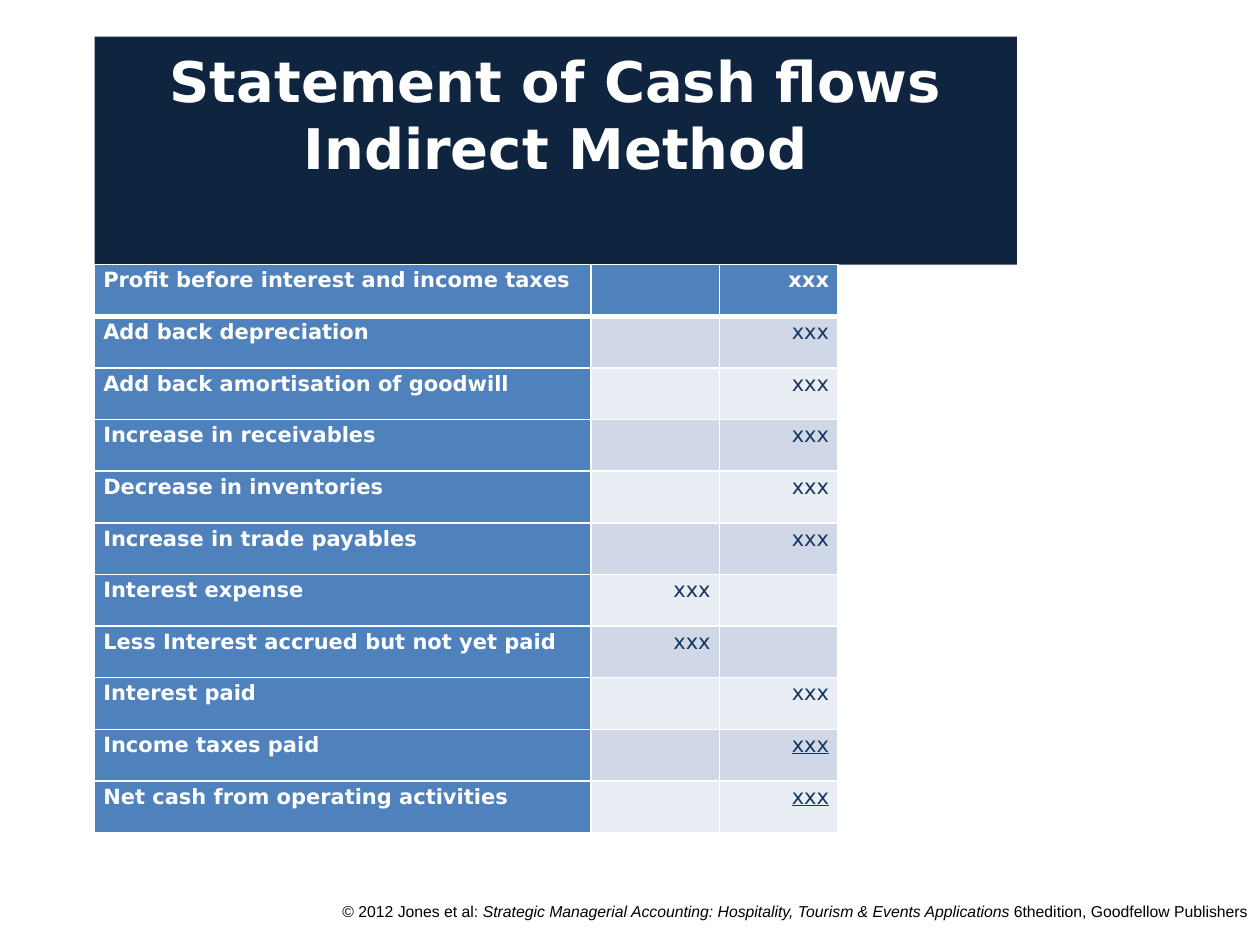
from lxml.etree import fromstring
from pptx import Presentation
from pptx.dml.color import RGBColor
from pptx.enum.text import MSO_ANCHOR, MSO_AUTO_SIZE, PP_ALIGN
from pptx.util import Inches, Pt

HUES = {"navy": "0F243E", "blue": "4F81BD", "odd": "D0D8E8", "even": "E9EDF4",
        "ink": "17375E", "white": "FFFFFF", "black": "000000"}
TITLE = "Statement of Cash flows\vIndirect Method"
ROWS = [
    ("Profit before interest and income taxes", "", "xxx"),
    ("Add back depreciation", "", "xxx"),
    ("Add back amortisation of goodwill", "", "xxx"),
    ("Increase in receivables", "", "xxx"),
    ("Decrease in inventories", "", "xxx"),
    ("Increase in trade payables", "", "xxx"),
    ("Interest expense", "xxx", ""),
    ("Less Interest accrued but not yet paid", "xxx", ""),
    ("Interest paid", "", "xxx"),
    ("Income taxes paid", "", "xxx"),
    ("Net cash from operating activities", "", "xxx"),
]
WIDTHS = (3.94, 1.02, 0.94)
HEIGHT = 0.41
TOTALS = 2
CREDIT = [
    ("© 2012 Jones et al: ", False),
    ("Strategic Managerial Accounting: Hospitality, Tourism & Events Applications ", True),
    ("6thedition, Goodfellow Publishers", False),
]
HEAD = {"name": "DejaVu Sans", "size": Pt(32), "bold": True}
BODY = {"name": "DejaVu Sans", "size": Pt(12)}
NOTE = {"name": "Arial", "size": Pt(9)}
PADS = {"margin_left": Inches(0.07), "margin_right": Inches(0.07),
        "margin_top": 0, "margin_bottom": 0}
SPACE = "http://schemas.openxmlformats.org/drawingml/2006/main"


def rgb(hue):
    """Return the named colour."""
    return RGBColor.from_string(HUES[hue])


def apply(item, form):
    """Set each attribute in the format."""
    for key, value in form.items():
        setattr(item, key, value)


def style(run, form, hue):
    """Format a run of text."""
    apply(run.font, form)
    run.font.color.rgb = rgb(hue)


def paint(item, hue):
    """Give a solid fill."""
    item.fill.solid()
    item.fill.fore_color.rgb = rgb(hue)


def edge(cell, top, bottom):
    """Draw white borders of the given point widths."""
    sides = {"L": 1, "R": 1, "T": top, "B": bottom}
    props = cell._tc.get_or_add_tcPr()
    for place, (side, width) in enumerate(sides.items()):
        props.insert(place, fromstring(
            f'<a:ln{side} xmlns:a="{SPACE}" w="{Pt(width)}"><a:solidFill>'
            f'<a:srgbClr val="{HUES["white"]}"/></a:solidFill></a:ln{side}>'))


def add_title(slide):
    """Fill the title band."""
    title = slide.shapes.title
    apply(title, {"left": Inches(0.75), "top": Inches(0.29),
                  "width": Inches(7.32), "height": Inches(1.81)})
    paint(title, "navy")
    frame = title.text_frame
    frame.text = TITLE
    apply(frame, {"vertical_anchor": MSO_ANCHOR.TOP, "word_wrap": True,
                  "auto_size": MSO_AUTO_SIZE.NONE, "margin_top": Inches(0.08)})
    para = frame.paragraphs[0]
    para.alignment = PP_ALIGN.CENTER
    for run in para.runs:
        style(run, HEAD, "white")


def add_grid(slide):
    """Build the cash flow table."""
    count = len(ROWS)
    grid = slide.shapes.add_table(
        count, len(WIDTHS), Inches(0.75), Inches(2.1),
        Inches(sum(WIDTHS)), Inches(HEIGHT * count)).table
    for col, width in zip(grid.columns, WIDTHS):
        col.width = Inches(width)
    for r, row in enumerate(ROWS):
        grid.rows[r].height = Inches(HEIGHT)
        for c, text in enumerate(row):
            cell = grid.cell(r, c)
            strong = r == 0 or c == 0
            band = "odd" if r % 2 else "even"
            apply(cell, PADS)
            paint(cell, "blue" if strong else band)
            edge(cell, 3 if r == 1 else 1, 3 if r == 0 else 1)
            para = cell.text_frame.paragraphs[0]
            apply(para, {"line_spacing": 1.15,
                         "alignment": PP_ALIGN.RIGHT if c else PP_ALIGN.LEFT})
            if text:
                run = para.add_run()
                run.text = text
                form = {"bold": strong, "underline": c > 0 and r >= count - TOTALS}
                style(run, BODY | form, "white" if strong else "ink")


def add_credit(slide):
    """Write the source line at the foot."""
    box = slide.shapes.add_textbox(Inches(2.23), Inches(7.11), Inches(7.77), Inches(0.39))
    box.text_frame.word_wrap = True
    para = box.text_frame.paragraphs[0]
    para.alignment = PP_ALIGN.RIGHT
    for text, slant in CREDIT:
        run = para.add_run()
        run.text = text
        style(run, NOTE | {"italic": slant}, "black")


def main():
    """Build and save the slide."""
    deck = Presentation()
    apply(deck, {"slide_width": Inches(10), "slide_height": Inches(7.5)})
    slide = deck.slides.add_slide(deck.slide_layouts[0])
    spare = slide.placeholders[1].element
    spare.getparent().remove(spare)
    add_credit(slide)
    add_title(slide)
    add_grid(slide)
    deck.save("out.pptx")


if __name__ == "__main__":
    main()
